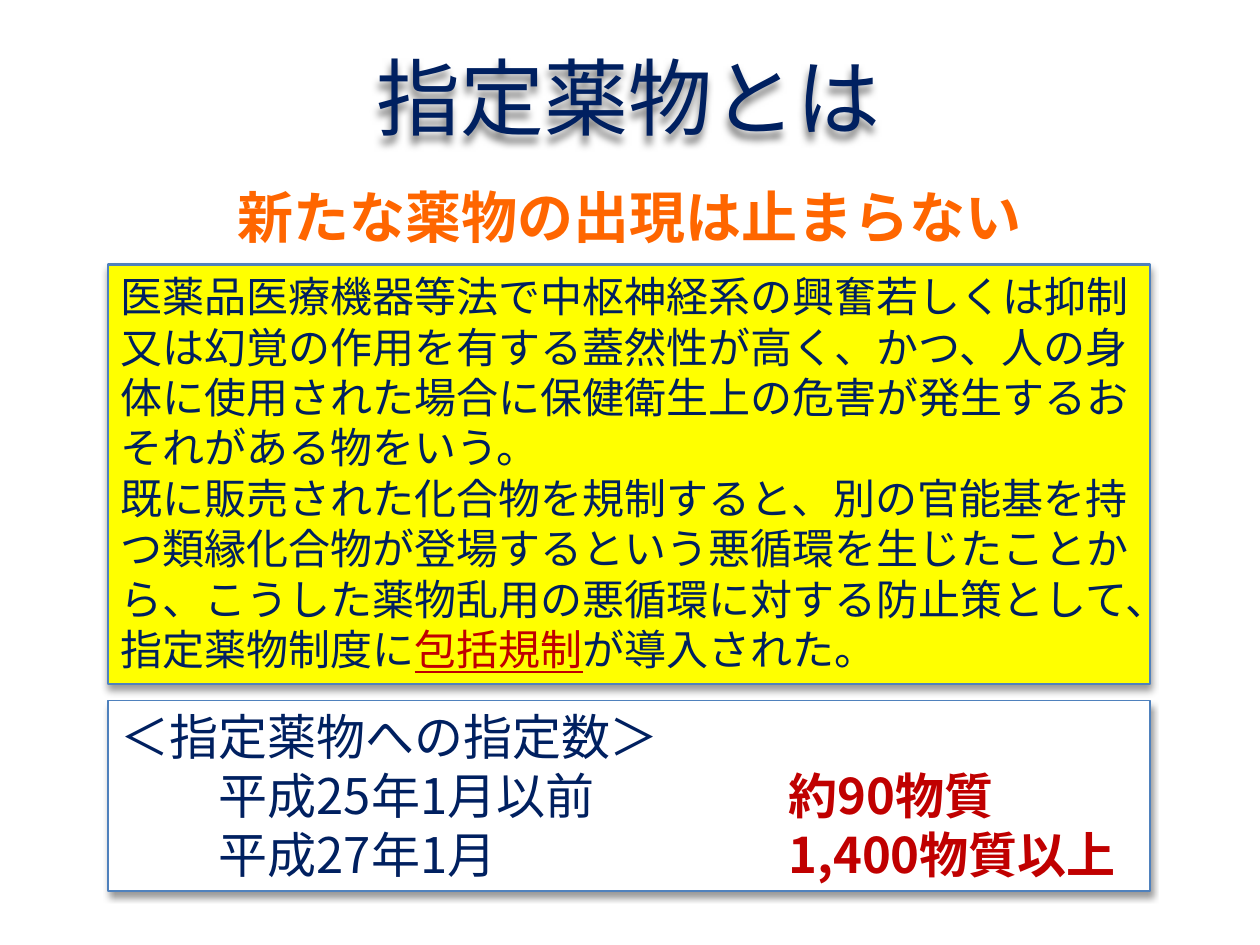
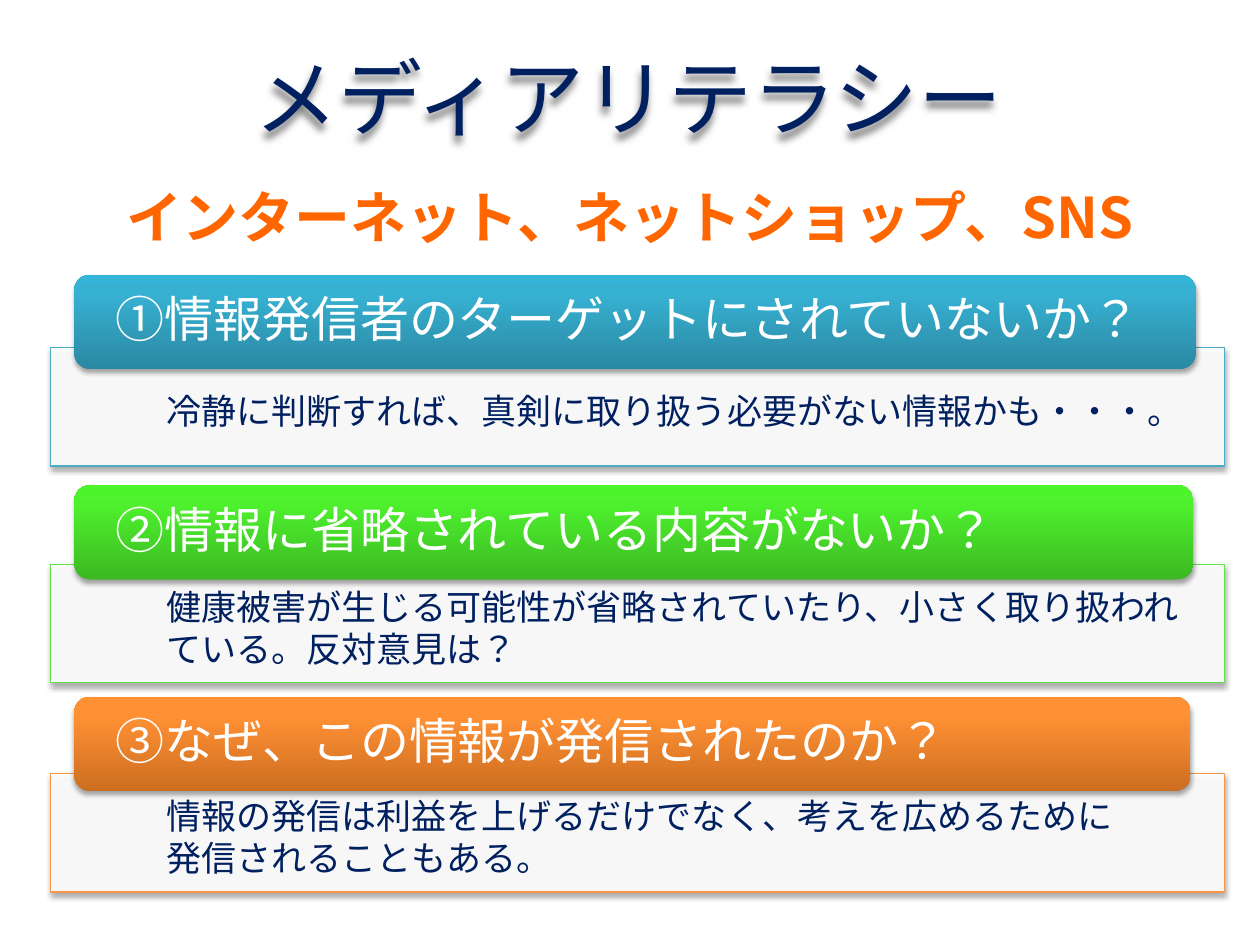
"""Build two slides on designated drugs and media literacy."""
from dataclasses import dataclass
from typing import Any, NamedTuple, Optional

from lxml import etree
from pptx import Presentation
from pptx import util as u
from pptx.dml.color import RGBColor
from pptx.enum import shapes, text
from pptx.oxml.ns import qn

FONT = "Noto Sans CJK JP"
COLORS = {
    "white": "FFFFFF", "black": "000000", "navy": "002060", "red": "C00000",
    "orange": "FF6600", "yellow": "FFFF00", "blue": "4F81BD",
    "aqua": "4BACC6", "green": "60E146", "amber": "F79646",
}
GRADIENTS = {
    "aqua": ((0, "2A88A2"), (80, "37B1D2"), (100, "34B4D6")),
    "green": ((0, "3CB923"), (80, "4EF02E"), (100, "4CF52A")),
    "amber": ((0, "CC6E20"), (80, "FF9034"), (100, "FF9136")),
}
CENTER, LEFT = text.PP_ALIGN.CENTER, text.PP_ALIGN.LEFT
TOP, MIDDLE = text.MSO_ANCHOR.TOP, text.MSO_ANCHOR.MIDDLE
RECT, ROUNDED = shapes.MSO_SHAPE.RECTANGLE, shapes.MSO_SHAPE.ROUNDED_RECTANGLE


class Area(NamedTuple):
    left: float
    top: float
    width: float
    height: float


class Shadow(NamedTuple):
    opacity: int
    blur: float
    distance: float
    angle: int


class Span(NamedTuple):
    words: str
    format: dict[str, Any] = {}
    color: Optional[str] = None


@dataclass(frozen=True)
class Style:
    size: int
    color: str = "navy"
    align: Any = LEFT
    anchor: Any = TOP
    bold: bool = False
    inset: tuple[float, float] = (0.1, 0.05)
    spacing: float = 1.0
    tabs: tuple[float, ...] = ()


@dataclass(frozen=True)
class Question:
    heading: str
    color: str
    bar: Area
    frame: Area
    answer: Area
    lines: tuple[str, ...]


TITLE = Style(48, align=CENTER, anchor=MIDDLE)
SUBTITLE = Style(32, "orange", CENTER, bold=True)
DEFINITION = Style(24)
COUNTS = Style(28, tabs=(0.78, 5.3))
HEADING = Style(28, "white", anchor=MIDDLE, inset=(0.29, 0), spacing=0.9)
ANSWER = Style(20)
TITLE_SHADOW = Shadow(50, 4, 4, 110)
BOX_SHADOW = Shadow(40, 4, 3, 90)
PANEL_SHADOW = Shadow(35, 3.1, 1.8, 90)

DEFINITION_TEXT = [
    [Span("医薬品医療機器等法で中枢神経系の興奮若しくは抑制又は幻覚の作用を有する蓋然性が高く、"
          "かつ、人の身体に使用された場合に保健衛生上の危害が発生するおそれがある物をいう。")],
    [Span("既に販売された化合物を規制すると、別の官能基を持つ類縁化合物が登場するという悪循環を"
          "生じたことから、こうした薬物乱用の悪循環に対する防止策として、指定薬物制度に"),
     Span("包括規制", {"underline": True}, "red"), Span("が導入された。")],
]
COUNTS_TEXT = [
    [Span("＜指定薬物への指定数＞")],
    [Span("\t平成25年1月以前\t"), Span("約90物質", {"bold": True}, "red")],
    [Span("\t平成27年1月\t"), Span("1,400物質以上", {"bold": True}, "red")],
]
QUESTIONS = [
    Question("①情報発信者のターゲットにされていないか？", "aqua",
             Area(0.59, 2.18, 8.9, 0.75), Area(0.4, 2.76, 9.32, 0.94),
             Area(1.22, 3.04, 8.32, 0.44),
             ("冷静に判断すれば、真剣に取り扱う必要がない情報かも・・・。",)),
    Question("②情報に省略されている内容がないか？", "green",
             Area(0.59, 3.85, 8.88, 0.75), Area(0.4, 4.48, 9.32, 0.94),
             Area(1.22, 4.6, 8.32, 0.77),
             ("健康被害が生じる可能性が省略されていたり、小さく取り扱われ",
              "ている。反対意見は？")),
    Question("③なぜ、この情報が発信されたのか？", "amber",
             Area(0.59, 5.53, 8.86, 0.75), Area(0.4, 6.14, 9.32, 0.94),
             Area(1.22, 6.26, 7.75, 0.77),
             ("情報の発信は利益を上げるだけでなく、考えを広めるために発信されることもある。",)),
]


def rgb(name: str) -> RGBColor:
    return RGBColor.from_string(COLORS[name])


def child(parent: Any, tag: str, **values: Any) -> Any:
    return etree.SubElement(parent, qn(tag), {key: str(value) for key, value in values.items()})


def apply(target: Any, values: dict[str, Any]) -> None:
    for name, value in values.items():
        setattr(target, name, value)


def add_shadow(shape: Any, shadow: Shadow) -> None:
    shape.shadow.inherit = False
    effects = shape._element.spPr.find(qn("a:effectLst"))
    outer = child(effects, "a:outerShdw", blurRad=u.Pt(shadow.blur), dist=u.Pt(shadow.distance),
                  dir=shadow.angle * 60000, rotWithShape=0)
    color = child(outer, "a:srgbClr", val=COLORS["black"])
    child(color, "a:alpha", val=shadow.opacity * 1000)


def write(shape: Any, paras: list[list[Span]], style: Style) -> None:
    frame = shape.text_frame
    side, edge = map(u.Inches, style.inset)
    apply(frame, {"word_wrap": True, "vertical_anchor": style.anchor, "margin_left": side,
                  "margin_right": side, "margin_top": edge, "margin_bottom": edge})
    for index, spans in enumerate(paras):
        para = frame.add_paragraph() if index else frame.paragraphs[0]
        apply(para, {"alignment": style.align, "line_spacing": style.spacing})
        if style.tabs:
            stops = child(para._p.get_or_add_pPr(), "a:tabLst")
            for stop in style.tabs:
                child(stops, "a:tab", pos=u.Inches(stop), algn="l")
        for span in spans:
            run = para.add_run()
            run.text = span.words
            apply(run.font, {"name": FONT, "size": u.Pt(style.size), "bold": style.bold,
                             **span.format})
            run.font.color.rgb = rgb(span.color or style.color)
            properties = run._r.get_or_add_rPr()
            properties.set("lang", "ja-JP")
            child(properties, "a:ea", typeface=FONT)


def add_text(page: Any, area: Area, words: tuple[str, ...], style: Style) -> Any:
    box = page.shapes.add_textbox(*map(u.Inches, area))
    write(box, [[Span(line)] for line in words], style)
    return box


def add_box(page: Any, area: Area, fill: str, line: str, weight: float, shadow: Shadow) -> Any:
    box = page.shapes.add_shape(RECT, *map(u.Inches, area))
    box.fill.solid()
    box.fill.fore_color.rgb = rgb(fill)
    box.line.color.rgb = rgb(line)
    box.line.width = u.Pt(weight)
    add_shadow(box, shadow)
    return box


def add_bar(page: Any, question: Question) -> None:
    bar = page.shapes.add_shape(ROUNDED, *map(u.Inches, question.bar))
    bar.fill.gradient()
    bar.fill.gradient_angle = 90
    stops = bar._element.spPr.find(qn("a:gradFill")).find(qn("a:gsLst"))
    for stop in list(stops):
        stops.remove(stop)
    for position, color in GRADIENTS[question.color]:
        child(child(stops, "a:gs", pos=position * 1000), "a:srgbClr", val=color)
    bar.line.fill.background()
    add_shadow(bar, PANEL_SHADOW)
    write(bar, [[Span(question.heading)]], HEADING)


def add_page(deck: Any, title: str, subtitle: str) -> Any:
    page = deck.slides.add_slide(deck.slide_layouts[6])
    heading = add_text(page, Area(-0.02, 0, 10.02, 1.53), (title,), TITLE)
    add_shadow(heading, TITLE_SHADOW)
    add_text(page, Area(-0.01, 1.4, 10.02, 0.64), (subtitle,), SUBTITLE)
    return page


def build_drugs(deck: Any) -> None:
    page = add_page(deck, "指定薬物とは", "新たな薬物の出現は止まらない")
    definition = add_box(page, Area(0.86, 2.1, 8.27, 3.33), "yellow", "blue", 1.25, BOX_SHADOW)
    write(definition, DEFINITION_TEXT, DEFINITION)
    counts = add_box(page, Area(0.86, 5.56, 8.27, 1.51), "white", "blue", 1, BOX_SHADOW)
    write(counts, COUNTS_TEXT, COUNTS)


def build_literacy(deck: Any) -> None:
    page = add_page(deck, "メディアリテラシー", "インターネット、ネットショップ、SNS")
    for question in QUESTIONS:
        panel = add_box(page, question.frame, "white", question.color, 0.75, PANEL_SHADOW)
        fill = panel._element.spPr.find(qn("a:solidFill"))
        child(fill[0], "a:alpha", val=90000)
        add_bar(page, question)
        add_text(page, question.answer, question.lines, ANSWER)


def main() -> None:
    deck = Presentation()
    apply(deck, {"slide_width": u.Inches(10), "slide_height": u.Inches(7.5)})
    build_drugs(deck)
    build_literacy(deck)
    deck.save("out.pptx")


if __name__ == "__main__":
    main()
